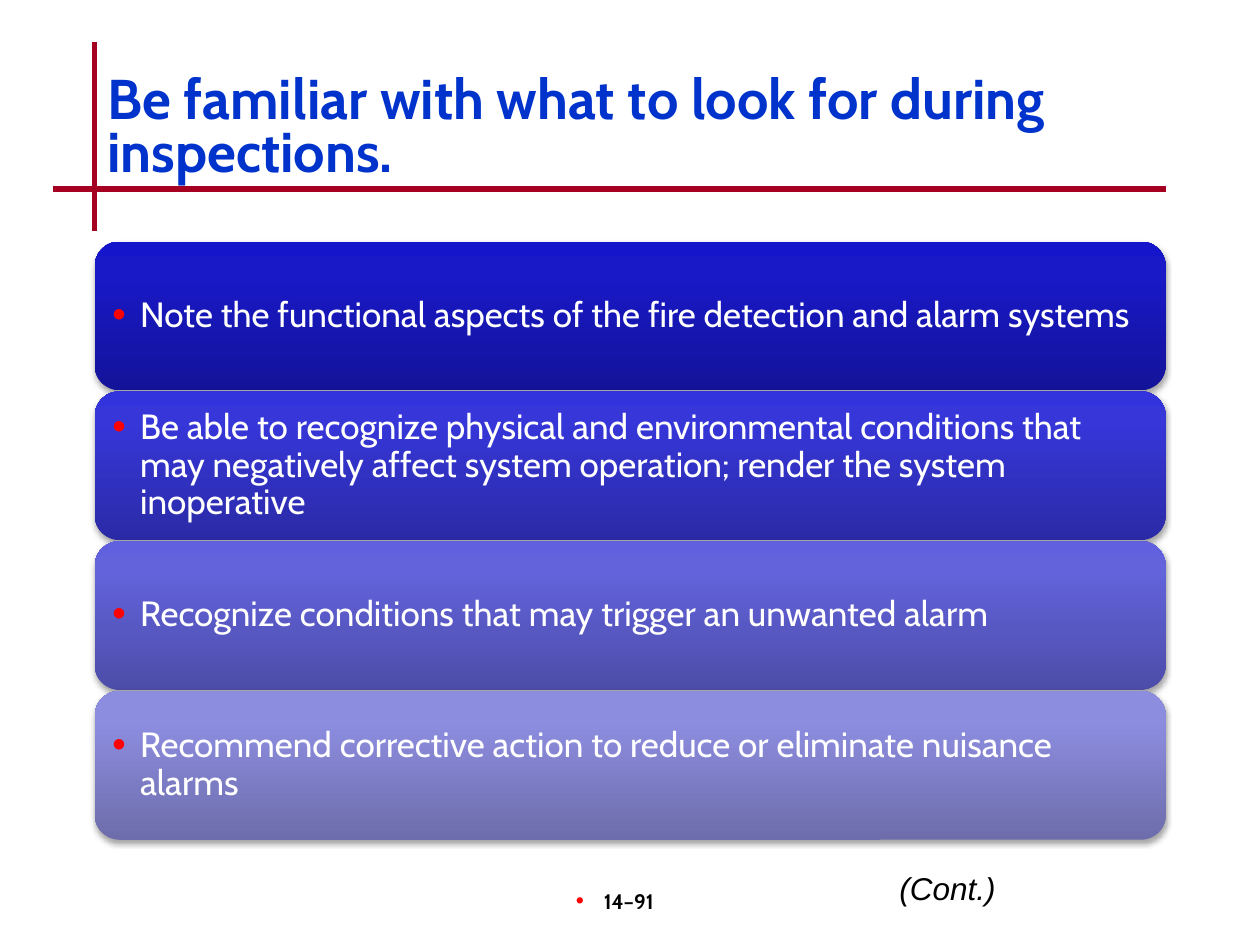
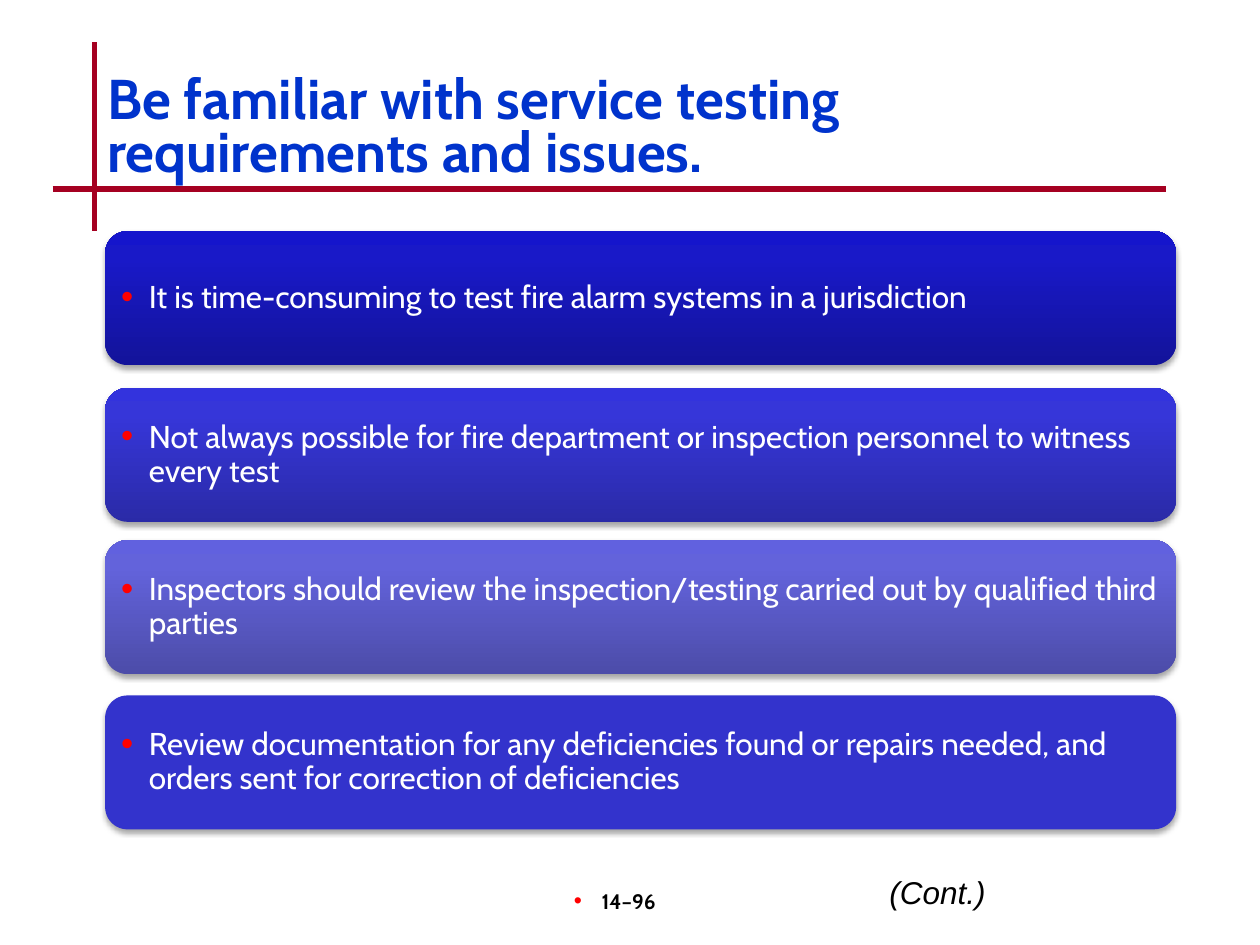
"""Build two fire alarm inspection slides with stacked bullet cards."""
import lxml.etree
import pptx
import pptx.dml.color
import pptx.enum.shapes
import pptx.enum.text
import pptx.oxml
import pptx.oxml.ns
import pptx.util

Cm = pptx.util.Cm
Anchor = pptx.enum.text.MSO_ANCHOR
Align = pptx.enum.text.PP_ALIGN

COLORS = {"rule": "A50021", "title": "0033CC", "text": "000000", "card_text": "FFFFFF",
          "bullet": "FF0000", "shadow": "000000"}
NAVY = ("13139A", "1919C8", "1515CC")
BLUE = ("2A2AA7", "3636D9", "3333DD")
VIOLET = ("4C4CA9", "6363DB", "6161DF")
LAVENDER = ("6D6DAC", "8D8DE0", "8C8CE2")
FLAT_BLUE = ("3333CC",)
STOPS = (0, 80, 100)

SLIDES = [
    {
        "title": "Be familiar with what to look for during inspections.",
        "number": "14–91",
        "continued": (16.08, 17.4),
        "left": 1.91, "height": 3, "tops": [4.87 + 3.02 * row for row in range(4)],
        "size": 20, "inset": 0.21,
        "cards": [
            ("Note the functional aspects of the fire detection and alarm systems", NAVY),
            ("Be able to recognize physical and environmental conditions that may negatively "
             "affect system operation; render the system inoperative", BLUE),
            ("Recognize conditions that may trigger an unwanted alarm", VIOLET),
            ("Recommend corrective action to reduce or eliminate nuisance alarms", LAVENDER),
        ],
    },
    {
        "title": "Be familiar with service testing requirements and issues.",
        "number": "14–96",
        "continued": (15.88, 17.48),
        "left": 2.12, "height": 2.7, "tops": [4.66, 7.82, 10.89, 14.02],
        "size": 18, "inset": 0.19,
        "cards": [
            ("It is time-consuming to test fire alarm systems in a jurisdiction", NAVY),
            ("Not always possible for fire department or inspection personnel to witness "
             "every test", BLUE),
            ("Inspectors should review the inspection/testing carried out by qualified third "
             "parties", VIOLET),
            ("Review documentation for any deficiencies found or repairs needed, and orders "
             "sent for correction of deficiencies", FLAT_BLUE),
        ],
    },
]

CARD_WIDTH = 21.59
BULLET_INDENT = 0.56
RULES = [(1.91, 0.85, 1.91, 4.65), (1.06, 3.81, 23.5, 3.81)]
TITLE_FONT = {"name": "Cabin", "size": pptx.util.Pt(32), "bold": True}
NUMBER_FONT = {"name": "Cabin", "size": pptx.util.Pt(12), "bold": True}
CONTINUED_FONT = {"name": "Arial", "size": pptx.util.Pt(18), "italic": True}


def rgb(name):
    return pptx.dml.color.RGBColor.from_string(COLORS[name])


def drawing_xml(markup):
    namespace = pptx.oxml.ns.nsdecls("a")
    return pptx.oxml.parse_xml(markup.replace(">", f" {namespace}>", 1))


def add_bullet(paragraph):
    properties = paragraph._p.get_or_add_pPr()
    properties.set("marL", str(Cm(BULLET_INDENT)))
    properties.set("indent", str(-Cm(BULLET_INDENT)))
    for tag, attribute, value in (("a:buSzPct", "val", "110000"),
                                  ("a:buFont", "typeface", "Arial"),
                                  ("a:buChar", "char", "•")):
        if tag == "a:buSzPct":
            color = lxml.etree.SubElement(properties, pptx.oxml.ns.qn("a:buClr"))
            lxml.etree.SubElement(color, pptx.oxml.ns.qn("a:srgbClr"), val=COLORS["bullet"])
        lxml.etree.SubElement(properties, pptx.oxml.ns.qn(tag)).set(attribute, value)


def write_text(shape, text, font, color, alignment=Align.LEFT, spacing=None, bullet=False,
               **frame_format):
    frame = shape.text_frame
    frame.word_wrap = True
    for name, value in frame_format.items():
        setattr(frame, name, value)
    paragraph = frame.paragraphs[0]
    paragraph.alignment = alignment
    if spacing:
        paragraph.line_spacing = spacing
    if bullet:
        add_bullet(paragraph)
    run = paragraph.add_run()
    run.text = text
    for name, value in font.items():
        setattr(run.font, name, value)
    run.font.color.rgb = rgb(color)


def add_text(slide, place, *content, **text_format):
    box = slide.shapes.add_textbox(*map(Cm, place))
    write_text(box, *content, **text_format)


def add_rule(slide, ends):
    rule = slide.shapes.add_connector(pptx.enum.shapes.MSO_CONNECTOR.STRAIGHT, *map(Cm, ends))
    rule.line.color.rgb = rgb("rule")
    rule.line.width = pptx.util.Pt(3)
    rule._element.spPr.append(drawing_xml("<a:effectLst></a:effectLst>"))


def paint_card(card, shades):
    card.shadow.inherit = False
    card.line.fill.background()
    card.fill.solid()
    card.fill.fore_color.rgb = pptx.dml.color.RGBColor.from_string(shades[0])
    properties = card._element.spPr
    if len(shades) > 1:
        stops = "".join(f'<a:gs pos="{stop * 1000}"><a:srgbClr val="{shade}"/></a:gs>'
                        for stop, shade in zip(STOPS, shades))
        solid = properties.find(pptx.oxml.ns.qn("a:solidFill"))
        properties.replace(solid, drawing_xml(
            f'<a:gradFill rotWithShape="1"><a:gsLst>{stops}</a:gsLst>'
            '<a:lin ang="16200000" scaled="0"/></a:gradFill>'))
    effects = properties.find(pptx.oxml.ns.qn("a:effectLst"))
    effects.append(drawing_xml(
        '<a:outerShdw blurRad="40000" dist="23000" dir="5400000" rotWithShape="0">'
        f'<a:srgbClr val="{COLORS["shadow"]}"><a:alpha val="35000"/></a:srgbClr>'
        '</a:outerShdw>'))


def add_cards(slide, content):
    font = {"name": "Cabin", "size": pptx.util.Pt(content["size"])}
    sides = ("left", "top", "right", "bottom")
    insets = {f"margin_{side}": Cm(content["inset"]) for side in sides}
    for top, (text, shades) in zip(content["tops"], content["cards"]):
        place = (content["left"], top, CARD_WIDTH, content["height"])
        card = slide.shapes.add_shape(pptx.enum.shapes.MSO_SHAPE.ROUNDED_RECTANGLE,
                                      *map(Cm, place))
        paint_card(card, shades)
        write_text(card, text, font, "card_text", spacing=0.9, bullet=True,
                   vertical_anchor=Anchor.MIDDLE, **insets)


def build_slide(presentation, content):
    slide = presentation.slides.add_slide(presentation.slide_layouts[6])
    for ends in RULES:
        add_rule(slide, ends)
    add_text(slide, (9.96, 17.78, 5.28, 1.27), content["number"], NUMBER_FONT, "text",
             alignment=Align.CENTER, bullet=True, margin_right=Cm(0.66))
    add_text(slide, (1.91, 1.35, 21.59, 2.54), content["title"], TITLE_FONT, "title",
             spacing=0.8, vertical_anchor=Anchor.MIDDLE)
    add_cards(slide, content)
    add_text(slide, (*content["continued"], 4.24, 1.02), "(Cont.)", CONTINUED_FONT, "text",
             alignment=Align.RIGHT)


def main():
    presentation = pptx.Presentation()
    presentation.slide_width = Cm(25.4)
    presentation.slide_height = Cm(19.05)
    for content in SLIDES:
        build_slide(presentation, content)
    presentation.save("out.pptx")


if __name__ == "__main__":
    main()
